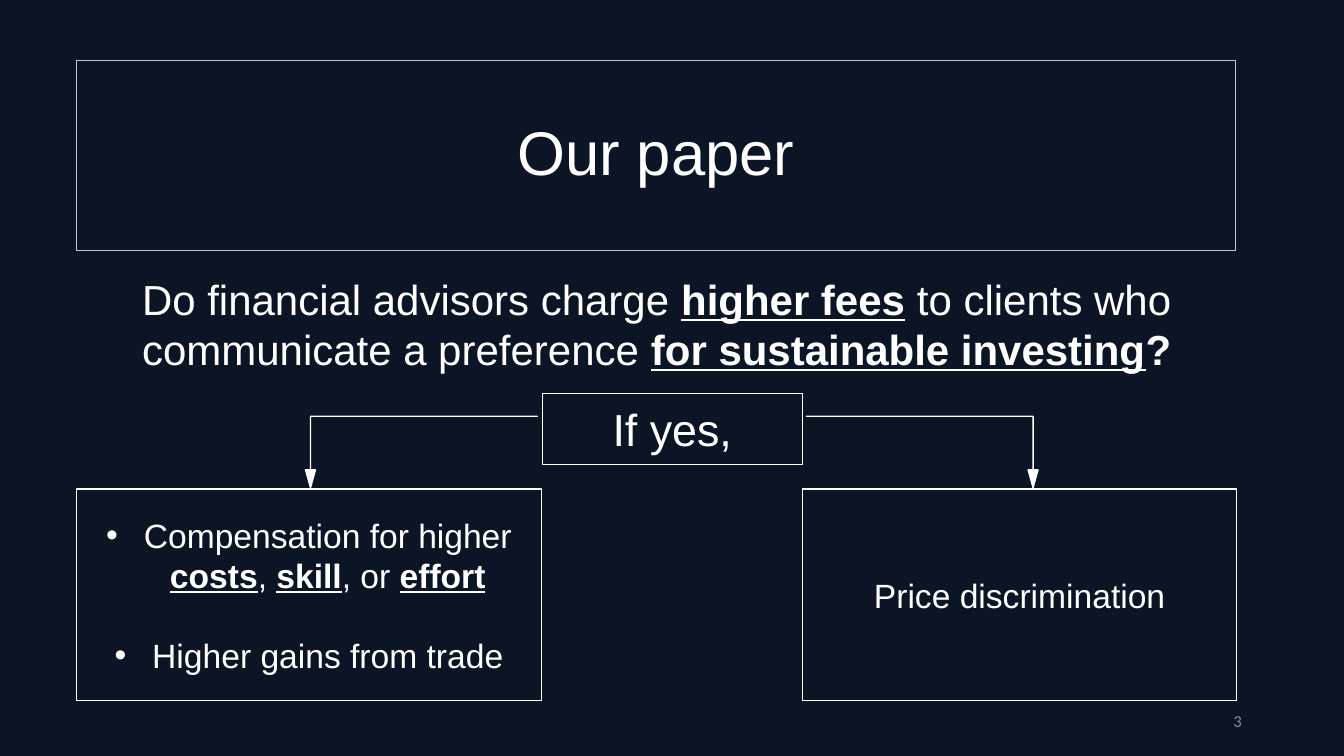
from lxml import etree
from pptx import Presentation
from pptx.dml.color import RGBColor
from pptx.enum.shapes import MSO_SHAPE
from pptx.enum.text import MSO_ANCHOR, MSO_AUTO_SIZE, PP_ALIGN
from pptx.oxml.ns import qn
from pptx.util import Cm, Pt

RECTANGLE = MSO_SHAPE.RECTANGLE
BENT_ARROW = MSO_SHAPE.BENT_UP_ARROW
MIDDLE, TOP = MSO_ANCHOR.MIDDLE, MSO_ANCHOR.TOP
CENTER, RIGHT = PP_ALIGN.CENTER, PP_ALIGN.RIGHT
NO_AUTOFIT = MSO_AUTO_SIZE.NONE

COLORS = {"navy": "0C1526", "white": "FFFFFF", "pale": "B4C7E7", "gray": "8C8C8C"}

QUESTION = [
    ("Do financial advisors charge ", ""),
    ("higher fees", "bu"),
    (" ", "b"),
    ("to clients who communicate a preference ", ""),
    ("for sustainable investing", "bu"),
    ("?", "b"),
]
REASONS = [
    [
        ("Compensation for higher ", ""),
        ("costs", "bu"),
        (", ", ""),
        ("skill", "bu"),
        (", or ", ""),
        ("effort", "bu"),
    ],
    [("Higher gains from trade", "")],
]


def color(name):
    """Return the named color."""
    return RGBColor.from_string(COLORS[name])


def place(shape, left, top, width, height):
    """Move and size a shape, in centimetres."""
    shape.left, shape.top = Cm(left), Cm(top)
    shape.width, shape.height = Cm(width), Cm(height)


def outline(shape, name="white", width=1):
    """Give a shape a solid outline."""
    shape.line.color.rgb = color(name)
    shape.line.width = Pt(width)


def add_bullet(para):
    """Give a paragraph a hanging bullet."""
    properties = para._p.get_or_add_pPr()
    properties.set("marL", str(Cm(0.95)))
    properties.set("indent", str(Cm(-0.95)))
    etree.SubElement(properties, qn("a:buFont")).set("typeface", "Arial")
    etree.SubElement(properties, qn("a:buChar")).set("char", "•")


def write(shape, paragraphs, size, name="white", font="Arial", align=CENTER,
          anchor=MIDDLE, bullets=False, gap=0):
    """Fill a shape with paragraphs made of styled spans."""
    frame = shape.text_frame
    frame.word_wrap = True
    frame.auto_size = NO_AUTOFIT
    frame.vertical_anchor = anchor
    for index, spans in enumerate(paragraphs):
        para = frame.add_paragraph() if index else frame.paragraphs[0]
        para.alignment = align
        para.space_before = Pt(gap if index else 0)
        if bullets:
            add_bullet(para)
        for text, style in spans:
            span = para.add_run()
            span.text = text
            span.font.name = font
            span.font.size = Pt(size)
            span.font.bold = "b" in style
            span.font.underline = "u" in style
            span.font.color.rgb = color(name)


def add_text(page, area, spans, size, **style):
    """Add a text box with one paragraph."""
    box = page.shapes.add_textbox(*map(Cm, area))
    write(box, [spans], size, **style)


def add_framed_box(page, area, text, size):
    """Add an outlined box with a centred label."""
    box = page.shapes.add_shape(RECTANGLE, *map(Cm, area))
    box.shadow.inherit = False
    box.fill.background()
    outline(box)
    write(box, [[(text, "")]], size)


def add_branch_arrow(page, left, flipped):
    """Add an arrow that runs sideways and then down."""
    arrow = page.shapes.add_shape(BENT_ARROW, Cm(left), Cm(10.49), Cm(5.84), Cm(1.8))
    arrow.shadow.inherit = False
    arrow.rotation = 180
    if flipped:
        arrow.element.spPr.find(qn("a:xfrm")).set("flipH", "1")
    for index, value in enumerate((0, 0.069, 0.25)):
        arrow.adjustments[index] = value
    arrow.fill.solid()
    arrow.fill.fore_color.rgb = color("white")
    outline(arrow)


def main():
    """Build the slide and save it."""
    deck = Presentation()
    deck.slide_width, deck.slide_height = Cm(33.87), Cm(19.05)
    page = deck.slides.add_slide(deck.slide_layouts[1])
    page.background.fill.solid()
    page.background.fill.fore_color.rgb = color("navy")

    title, reasons = page.placeholders
    place(title, 1.93, 1.52, 29.21, 4.8)
    outline(title, "pale", 0.75)
    write(title, [[("Our paper", "")]], 44)
    title.text_frame.paragraphs[0].line_spacing = 0.9

    place(reasons, 1.93, 12.32, 11.71, 5.33)
    outline(reasons)
    write(reasons, REASONS, 24, bullets=True, gap=28)

    add_text(page, (23.93, 17.65, 7.62, 1.02), [("3", "")], 12,
             name="gray", font="Calibri", align=RIGHT)
    add_text(page, (0.89, 6.76, 31.32, 2.82), QUESTION, 30, anchor=TOP)
    add_framed_box(page, (13.67, 9.91, 6.55, 1.8), "If yes,", 32)
    add_framed_box(page, (20.22, 12.32, 10.95, 5.33), "Price discrimination", 24)
    add_branch_arrow(page, 7.7, False)
    add_branch_arrow(page, 20.32, True)
    deck.save("out.pptx")


if __name__ == "__main__":
    main()
